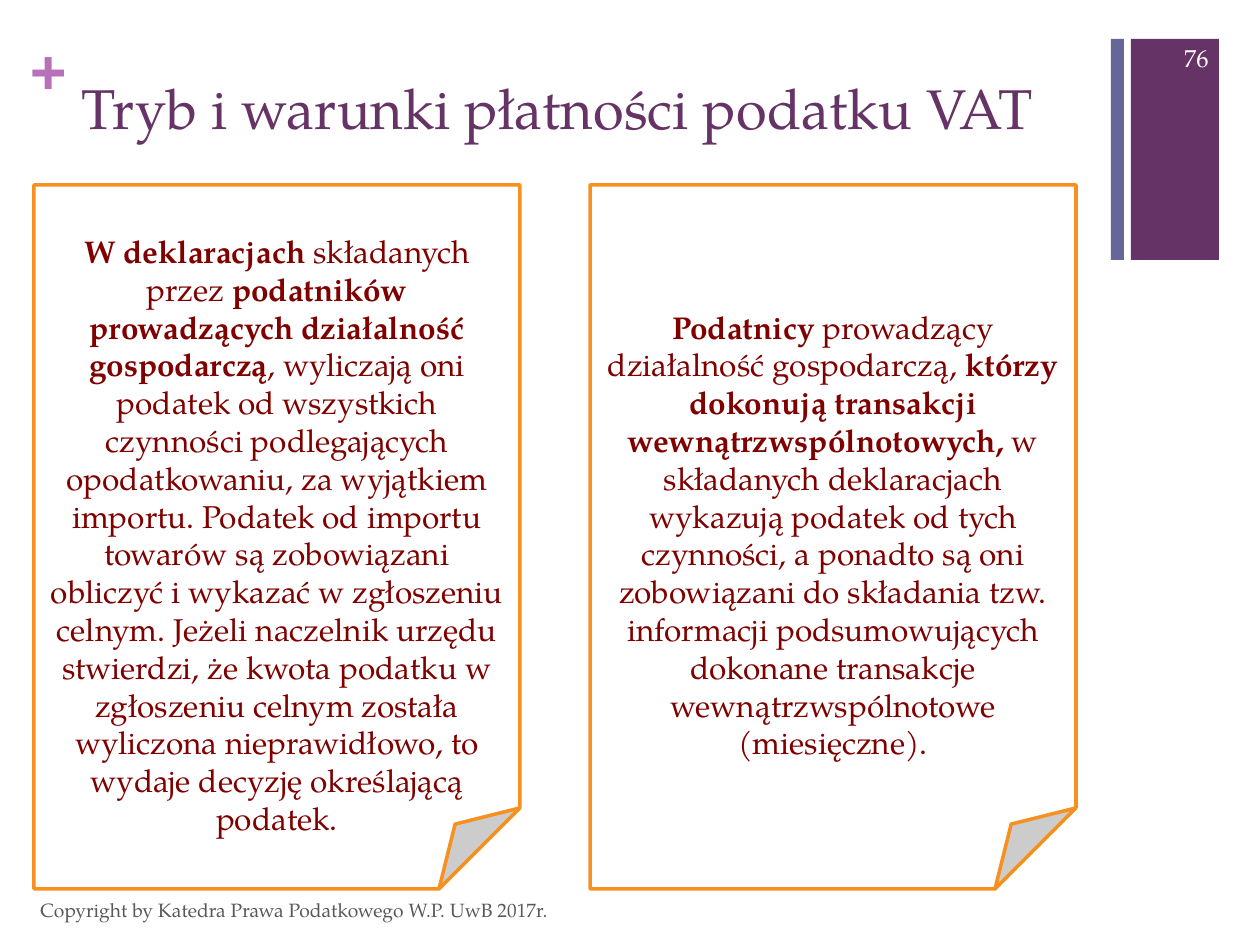
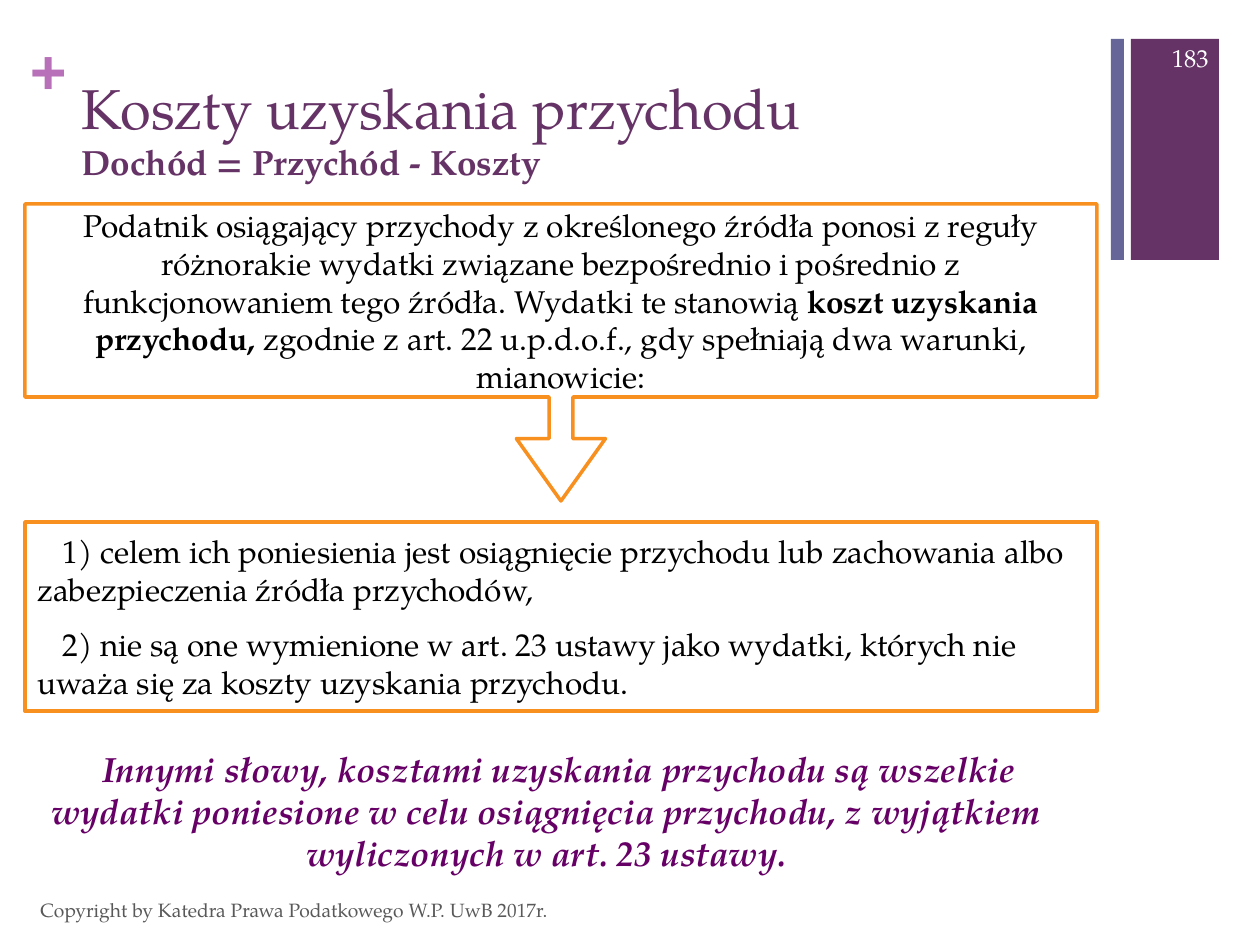
from pptx import Presentation
from pptx import util as u
from pptx.dml import color
from pptx.enum import shapes, text

FONT = "TeX Gyre Pagella"
PURPLE, STRIPE, PLUS = "663366", "666699", "B870B8"
ORANGE, MAROON, VIOLET = "F7901E", "800000", "660066"
BLACK, WHITE, GREY = "000000", "FFFFFF", "595959"
LEFT, CENTER, RIGHT = text.PP_ALIGN.LEFT, text.PP_ALIGN.CENTER, text.PP_ALIGN.RIGHT
TOP, MIDDLE = text.MSO_ANCHOR.TOP, text.MSO_ANCHOR.MIDDLE
COPYRIGHT = "Copyright by Katedra Prawa Podatkowego W.P. UwB 2017r."


def px(value):
    return u.Emu(round(value * 914400 / 126))


def rgb(value):
    return color.RGBColor.from_string(value)


class Slides:
    def __init__(self):
        self.deck = Presentation()
        self.deck.slide_width, self.deck.slide_height = px(1260), px(945)
        self.page = None

    def new_page(self, number, title, subtitle=None):
        self.page = self.deck.slides.add_slide(self.deck.slide_layouts[5])
        self.shape("RECTANGLE", (1131, 39, 88, 221), PURPLE)
        plus = self.label((30, 32, 37, 77), "**+", 36, PLUS, font="Arial")
        self.margins(plus, 0, 0, 0, 0)
        plus.text_frame.word_wrap = False
        self.shape("RECTANGLE", (1111, 39, 13, 221), STRIPE)
        self.title(title, subtitle)
        self.label((28, 885, 844, 50), COPYRIGHT, 11, GREY, anchor=MIDDLE)
        self.label((1144, 33, 77, 50), number, 14, WHITE, RIGHT, MIDDLE)

    def title(self, heading, subtitle):
        box = self.page.shapes.title
        box.left, box.top, box.width, box.height = map(px, (69, 67, 1041, 154))
        frame = box.text_frame
        frame.auto_size = text.MSO_AUTO_SIZE.NONE
        frame.vertical_anchor = TOP
        para = frame.paragraphs[0]
        para.text = f"{heading}\v{subtitle}" if subtitle else heading
        para.alignment = LEFT
        for span, size in zip(para.runs, (32, 20)):
            self.style(span, size, PURPLE, bold=size == 20)

    def shape(self, kind, place, fill, line=None):
        box = self.page.shapes.add_shape(shapes.MSO_SHAPE[kind], *map(px, place))
        box.shadow.inherit = False
        box.fill.solid()
        box.fill.fore_color.rgb = rgb(fill)
        if line:
            box.line.color.rgb = rgb(line)
            box.line.width = u.Pt(2)
        else:
            box.line.fill.background()
        return box

    def panel(self, kind, place, words, ink, align=CENTER, **layout):
        box = self.shape(kind, place, WHITE, ORANGE)
        self.fill_text(box, words, 18, ink, align, MIDDLE, **layout)
        return box

    def label(self, place, words, size, ink, align=LEFT, anchor=TOP, **layout):
        box = self.page.shapes.add_textbox(*map(px, place))
        self.fill_text(box, words, size, ink, align, anchor, **layout)
        return box

    def fill_text(self, box, words, size, ink, align, anchor,
                  indent=0, gap=0, italic=False, font=FONT):
        frame = box.text_frame
        frame.word_wrap = True
        frame.vertical_anchor = anchor
        frame.text = words.replace("**", "")
        for index, (para, line) in enumerate(zip(frame.paragraphs, words.split("\n"))):
            para.alignment = align
            para.space_before = u.Pt(gap if index else 0)
            if indent:
                properties = para._p.get_or_add_pPr()
                properties.set("marL", "0")
                properties.set("indent", str(px(indent)))
            para.text = ""
            for part, piece in enumerate(line.split("**")):
                if piece:
                    span = para.add_run()
                    span.text = piece
                    self.style(span, size, ink, part % 2 == 1, italic, font)

    def style(self, span, size, ink, bold=False, italic=False, font=FONT):
        span.font.name = font
        span.font.size = u.Pt(size)
        span.font.color.rgb = rgb(ink)
        span.font.bold = bold
        span.font.italic = italic

    def margins(self, box, left, top, right, bottom):
        frame = box.text_frame
        frame.margin_left, frame.margin_top = px(left), px(top)
        frame.margin_right, frame.margin_bottom = px(right), px(bottom)


def payment_page(slides):
    slides.new_page("76", "Tryb i warunki płatności podatku VAT")
    cards = (
        "**W deklaracjach **składanych przez** podatników prowadzących działalność "
        "gospodarczą**, wyliczają oni podatek od wszystkich czynności podlegających "
        "opodatkowaniu, za wyjątkiem importu. Podatek od importu towarów są "
        "zobowiązani obliczyć i wykazać w zgłoszeniu celnym. Jeżeli naczelnik urzędu "
        "stwierdzi, że kwota podatku w zgłoszeniu celnym została wyliczona "
        "nieprawidłowo, to wydaje decyzję określającą podatek.",
        "**Podatnicy** prowadzący działalność gospodarczą, **którzy dokonują "
        "transakcji wewnątrzwspólnotowych, **w składanych deklaracjach wykazują "
        "podatek od tych czynności, a ponadto są oni zobowiązani do składania tzw. "
        "informacji podsumowujących dokonane transakcje wewnątrzwspólnotowe "
        "(miesięczne).",
    )
    for column, words in enumerate(cards):
        card = slides.panel("FOLDED_CORNER", (34 + 556 * column, 185, 486, 704),
                            words, MAROON)
        slides.margins(card, 13, 76, 13, 0)


def cost_page(slides):
    slides.new_page("183", "Koszty uzyskania przychodu", "Dochód = Przychód - Koszty")
    callout = slides.panel(
        "DOWN_ARROW_CALLOUT", (25, 204, 1072, 297),
        "Podatnik osiągający przychody z określonego źródła ponosi z reguły różnorakie "
        "wydatki związane bezpośrednio i pośrednio z funkcjonowaniem tego źródła. "
        "Wydatki te stanowią **koszt uzyskania przychodu,** zgodnie z art. 22 "
        "u.p.d.o.f., gdy spełniają dwa warunki, mianowicie:", BLACK)
    for index, value in enumerate((0.08, 0.15, 0.21, 0.65)):
        callout.adjustments[index] = value
    slides.panel(
        "RECTANGLE", (25, 522, 1072, 189),
        "1) celem ich poniesienia jest osiągnięcie przychodu lub zachowania albo "
        "zabezpieczenia źródła przychodów,\n"
        "2) nie są one wymienione w art. 23 ustawy jako wydatki, których nie uważa "
        "się za koszty uzyskania przychodu.", BLACK, LEFT, indent=25, gap=10)
    slides.label(
        (1, 741, 1091, 140),
        "**Innymi słowy, kosztami uzyskania przychodu są wszelkie wydatki poniesione "
        "w celu osiągnięcia przychodu, z wyjątkiem wyliczonych w art. 23 ustawy.",
        20, VIOLET, CENTER, indent=25, italic=True)


def main():
    slides = Slides()
    payment_page(slides)
    cost_page(slides)
    slides.deck.save("out.pptx")


if __name__ == "__main__":
    main()
